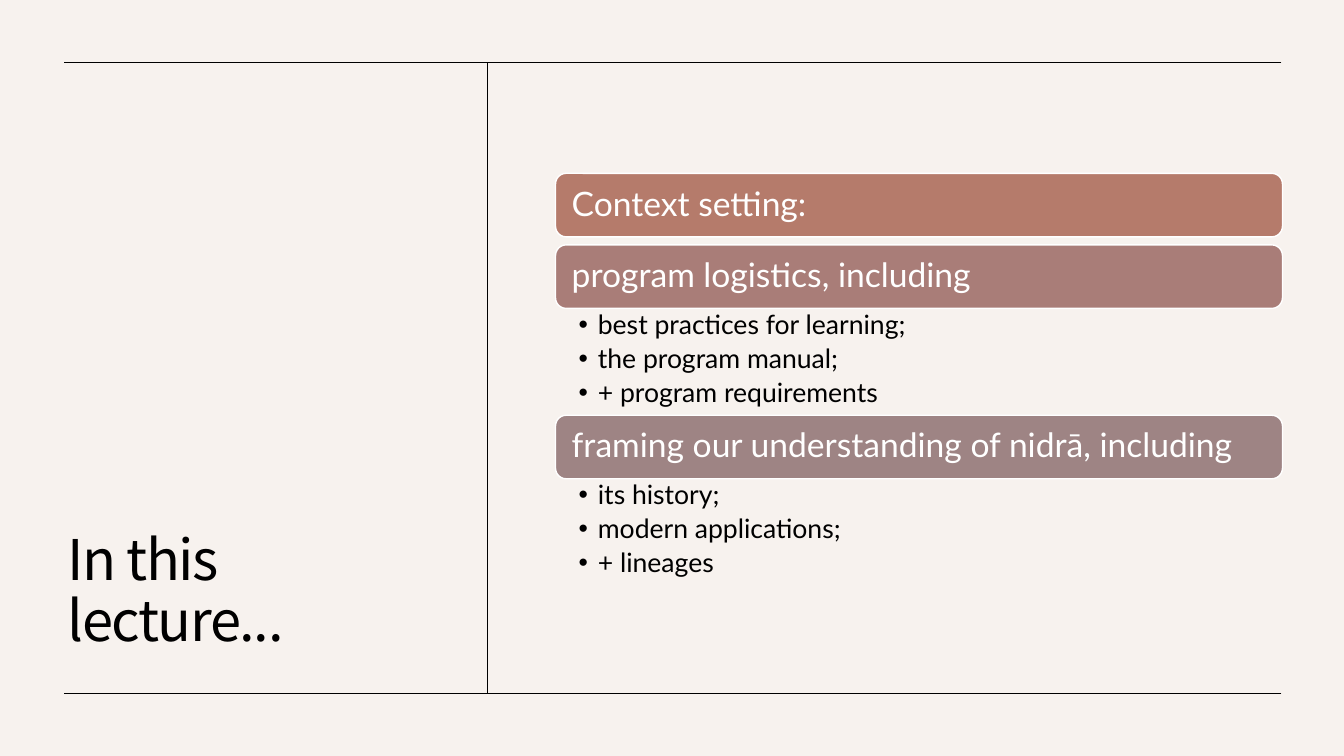
import lxml.etree
import pptx
import pptx.dml.color
import pptx.enum.shapes
import pptx.enum.text
import pptx.oxml.ns
import pptx.util

Inches = pptx.util.Inches
Pt = pptx.util.Pt
qn = pptx.oxml.ns.qn
ANCHOR = pptx.enum.text.MSO_ANCHOR

COLORS = {"paper": "F7F2EE", "ink": "000000", "white": "FFFFFF",
          "clay": "B57B6B", "rose": "A97D78", "mauve": "9E8484"}

TOPICS = [
    ("Context setting:", "clay", 1.72, []),
    ("program logistics, including", "rose", 2.43,
     ["best practices for learning;", "the program manual;", "+ program requirements"]),
    ("framing our understanding of nidrā, including", "mauve", 4.12,
     ["its history;", "modern applications;", "+ lineages"]),
]
TOPIC_LEFT, TOPIC_WIDTH, BAR_HEIGHT, LIST_HEIGHT = 5.51, 7.21, 0.63, 1.06
LEFT, RIGHT, TOP, BOTTOM, DIVIDER = 0.63, 12.71, 0.62, 6.88, 4.83


class SlideBuilder:
    title_font = "Noto Sans CJK KR"
    body_font = "Lato"

    def __init__(self, slide):
        self.slide = slide
        slide.background.fill.solid()
        slide.background.fill.fore_color.rgb = self.color("paper")

    def color(self, name):
        return pptx.dml.color.RGBColor.from_string(COLORS[name])

    def place(self, sp, left, top, width, height):
        sp.left, sp.top = Inches(left), Inches(top)
        sp.width, sp.height = Inches(width), Inches(height)

    def frame(self, sp, anchor, margins):
        """Set up the text frame; margins are left, top, right, bottom in inches."""
        tf = sp.text_frame
        tf.word_wrap = True
        tf.auto_size = pptx.enum.text.MSO_AUTO_SIZE.NONE
        tf.vertical_anchor = anchor
        (tf.margin_left, tf.margin_top,
         tf.margin_right, tf.margin_bottom) = map(Inches, margins)
        return tf

    def style(self, p, font, size, color, after=0):
        p.alignment = pptx.enum.text.PP_ALIGN.LEFT
        p.line_spacing = 0.9
        p.space_before, p.space_after = Pt(0), Pt(after)
        p.font.name, p.font.size = font, Pt(size)
        p.font.color.rgb = self.color(color)

    def title(self, text, left, top, width, height):
        sp = self.slide.shapes.title
        self.place(sp, left, top, width, height)
        tf = self.frame(sp, ANCHOR.BOTTOM, (0.1, 0.05, 0.3, 0.05))
        tf.text = text
        p = tf.paragraphs[0]
        self.style(p, self.title_font, 40, "ink")
        p.runs[0].font._element.set("spc", "-100")

    def rule(self, x1, y1, x2, y2):
        line = self.slide.shapes.add_connector(
            pptx.enum.shapes.MSO_CONNECTOR.STRAIGHT,
            Inches(x1), Inches(y1), Inches(x2), Inches(y2))
        line.line.color.rgb = self.color("ink")
        line.line.width = Pt(0.5)
        lxml.etree.SubElement(line._element.spPr, qn("a:effectLst"))

    def bar(self, text, fill, left, top, width, height):
        sp = self.slide.shapes.add_shape(
            pptx.enum.shapes.MSO_SHAPE.ROUNDED_RECTANGLE,
            Inches(left), Inches(top), Inches(width), Inches(height))
        sp.shadow.inherit = False
        sp.fill.solid()
        sp.fill.fore_color.rgb = self.color(fill)
        sp.line.color.rgb = self.color("white")
        sp.line.width = Pt(1)
        tf = self.frame(sp, ANCHOR.MIDDLE, (0.13, 0.1, 0.13, 0.1))
        tf.text = text
        self.style(tf.paragraphs[0], self.body_font, 24, "white")

    def bullets(self, sp, items, left, top, width, height):
        self.place(sp, left, top, width, height)
        tf = self.frame(sp, ANCHOR.TOP, (0.23, 0.03, 0.19, 0.03))
        tf.text = "\n".join(items)
        for p in tf.paragraphs:
            self.style(p, self.body_font, 19, "ink", after=3.8)
            pPr = p._p.get_or_add_pPr()
            pPr.set("marL", str(Inches(0.19)))
            pPr.set("indent", str(Inches(-0.19)))
            bullet = lxml.etree.Element(qn("a:buChar"), char="•")
            pPr.find(qn("a:spcAft")).addnext(bullet)


def main():
    prs = pptx.Presentation()
    prs.slide_width, prs.slide_height = Inches(13.33), Inches(7.5)
    s = prs.slides.add_slide(prs.slide_layouts.get_by_name("Two Content"))
    builder = SlideBuilder(s)
    builder.title("In this lecture...", 0.57, 0.99, 3.83, 5.54)
    for y in (BOTTOM, TOP):
        builder.rule(RIGHT, y, LEFT, y)
    builder.rule(DIVIDER, TOP, DIVIDER, BOTTOM)

    bodies = iter([s.placeholders[1], s.placeholders[2]])
    for heading, fill, top, items in TOPICS:
        builder.bar(heading, fill, TOPIC_LEFT, top, TOPIC_WIDTH, BAR_HEIGHT)
        if items:
            builder.bullets(next(bodies), items, TOPIC_LEFT, top + BAR_HEIGHT,
                            TOPIC_WIDTH, LIST_HEIGHT)
    prs.save("out.pptx")


if __name__ == "__main__":
    main()
